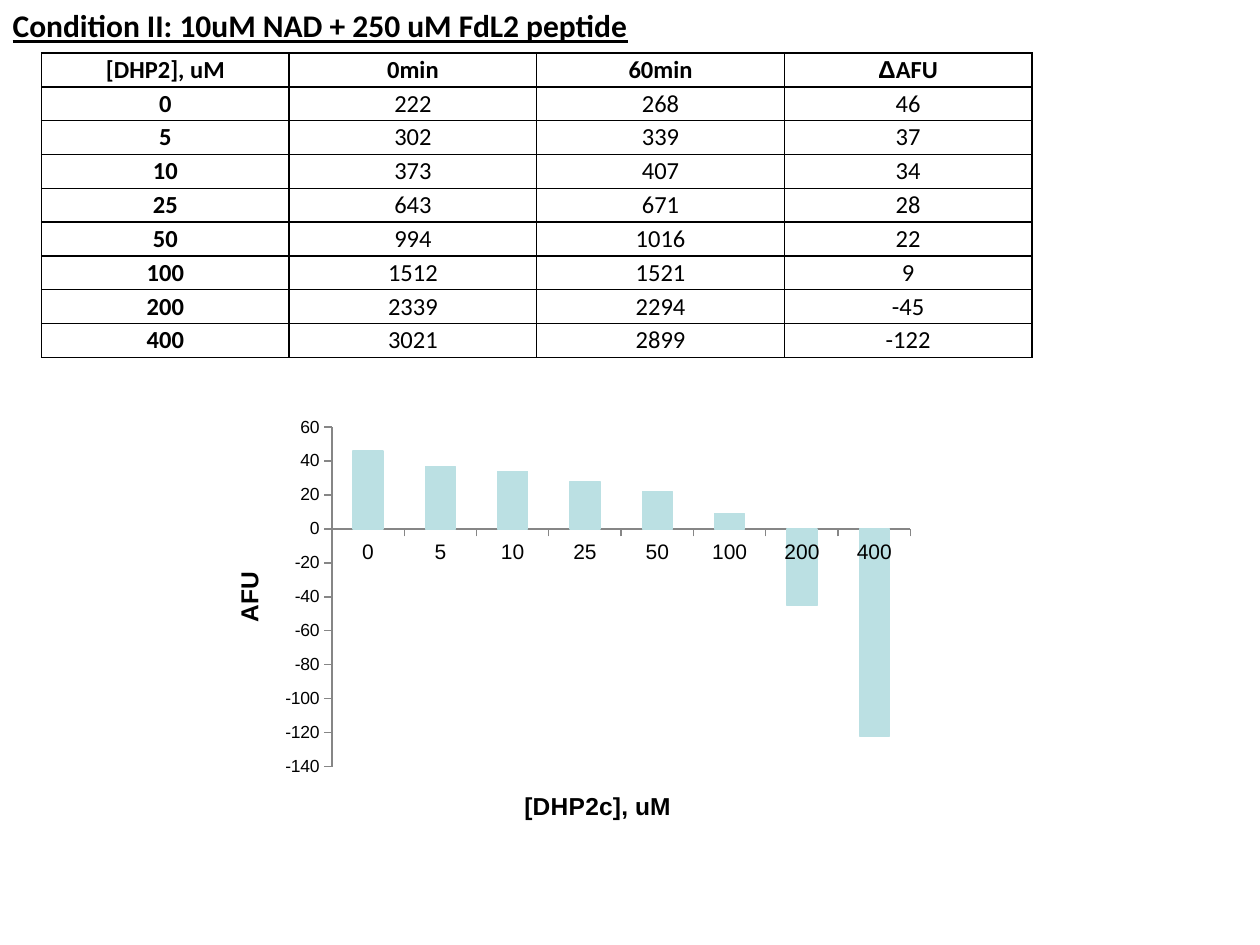
import pptx
import pptx.chart.data
import pptx.dml.color
import pptx.enum.chart
import pptx.enum.text
import pptx.oxml
import pptx.oxml.ns
import pptx.util
from pptx.util import Inches

HEADING = "Condition II: 10uM NAD + 250 uM FdL2 peptide"
HEADERS = ["[DHP2], uM", "0min", "60min", "ΔAFU"]
READINGS = [  # concentration, AFU at 0 min, AFU at 60 min, change
    (0, 222, 268, 46),
    (5, 302, 339, 37),
    (10, 373, 407, 34),
    (25, 643, 671, 28),
    (50, 994, 1016, 22),
    (100, 1512, 1521, 9),
    (200, 2339, 2294, -45),
    (400, 3021, 2899, -122),
]
COLORS = {"text": "000000", "border": "000000", "bar": "BBE0E3", "axis": "868686"}
TABLE_BOX = [Inches(v) for v in (0.33, 0.42, 7.86, 2.42)]
CHART_BOX = [Inches(v) for v in (1.67, 3.25, 5.67, 3.5)]
PLOT_AREA = {"x": 0.17, "y": 0.04, "w": 0.81, "h": 0.77}
CENTER = pptx.enum.text.PP_ALIGN.CENTER


def rgb(name):
    return pptx.dml.color.RGBColor.from_string(COLORS[name])


def set_all(target, **values):
    for name, value in values.items():
        setattr(target, name, value)


def style_font(font, size, face, **extra):
    set_all(font, size=pptx.util.Pt(size), name=face, **extra)
    font.color.rgb = rgb("text")


def add_heading(slide):
    heading = slide.shapes.title
    set_all(heading, left=0, top=0, width=Inches(5.13), height=Inches(0.4))
    frame = heading.text_frame
    set_all(frame, text=HEADING, word_wrap=False,
            vertical_anchor=pptx.enum.text.MSO_ANCHOR.TOP,
            auto_size=pptx.enum.text.MSO_AUTO_SIZE.SHAPE_TO_FIT_TEXT,
            margin_left=Inches(0.1), margin_right=Inches(0.1),
            margin_top=Inches(0.05), margin_bottom=Inches(0.05))
    line = frame.paragraphs[0]
    line.alignment = pptx.enum.text.PP_ALIGN.LEFT
    style_font(line.runs[0].font, 18, "Calibri", bold=True, underline=True)


def draw_borders(cell):
    properties = cell._tc.get_or_add_tcPr()
    for side in ("lnL", "lnR", "lnT", "lnB"):
        properties.append(pptx.oxml.parse_xml(
            f'<a:{side} {pptx.oxml.ns.nsdecls("a")} w="12700"><a:solidFill>'
            f'<a:srgbClr val="{COLORS["border"]}"/></a:solidFill></a:{side}>'))


def fill_cell(cell, text, bold):
    set_all(cell, margin_left=0, margin_right=0, margin_top=0, margin_bottom=0,
            vertical_anchor=pptx.enum.text.MSO_ANCHOR.MIDDLE)
    paragraph = cell.text_frame.paragraphs[0]
    paragraph.alignment = CENTER
    # The Greek delta is set in Arial, everything else in Calibri
    parts = ["Δ", text[1:]] if text.startswith("Δ") else [text]
    for part in parts:
        run = paragraph.add_run()
        run.text = part
        style_font(run.font, 14, "Arial" if part == "Δ" else "Calibri", bold=bold)
    draw_borders(cell)
    cell.fill.background()


def add_readings_table(slide):
    rows = [HEADERS] + READINGS
    table = slide.shapes.add_table(len(rows), len(HEADERS), *TABLE_BOX).table
    set_all(table, first_row=False, horz_banding=False)
    for r, row in enumerate(rows):
        for c, value in enumerate(row):
            fill_cell(table.cell(r, c), str(value), bold=r == 0 or c == 0)


def style_axis(axis, title, size):
    set_all(axis, has_major_gridlines=False, has_title=True,
            major_tick_mark=pptx.enum.chart.XL_TICK_MARK.OUTSIDE,
            minor_tick_mark=pptx.enum.chart.XL_TICK_MARK.NONE)
    axis.format.line.color.rgb = rgb("axis")
    axis.format.line.width = pptx.util.Pt(0.75)
    style_font(axis.tick_labels.font, size, "Arial")
    frame = axis.axis_title.text_frame
    frame.text = title
    style_font(frame.paragraphs[0].runs[0].font, 14, "Arial", bold=True)


def place_plot_area(chart):
    plot_area = chart._chartSpace.chart.plotArea
    for old in plot_area.findall(pptx.oxml.ns.qn("c:layout")):
        plot_area.remove(old)
    modes = "".join(f'<c:{side}Mode val="edge"/>' for side in "xy")
    sizes = "".join(f'<c:{key} val="{value}"/>' for key, value in PLOT_AREA.items())
    plot_area.insert(0, pptx.oxml.parse_xml(
        f'<c:layout {pptx.oxml.ns.nsdecls("c")}><c:manualLayout>'
        f'<c:layoutTarget val="inner"/>{modes}{sizes}</c:manualLayout></c:layout>'))


def add_change_chart(slide):
    data = pptx.chart.data.CategoryChartData()
    data.categories = [str(row[0]) for row in READINGS]
    data.add_series("Series 1", [row[-1] for row in READINGS])
    chart = slide.shapes.add_chart(
        pptx.enum.chart.XL_CHART_TYPE.COLUMN_CLUSTERED, *CHART_BOX, data).chart
    set_all(chart, has_title=False, has_legend=False)
    style_font(chart.font, 10, "Arial")
    style_axis(chart.category_axis, "[DHP2c], uM", 12)
    style_axis(chart.value_axis, "AFU", 10)
    set_all(chart.value_axis, minimum_scale=-140, maximum_scale=60, major_unit=20)
    plot = chart.plots[0]
    set_all(plot, gap_width=140, vary_by_categories=False)
    bars = plot.series[0]
    bars.invert_if_negative = False
    bars.format.fill.solid()
    bars.format.fill.fore_color.rgb = rgb("bar")
    bars.format.line.color.rgb = rgb("bar")
    bars.format.line.width = pptx.util.Pt(0.75)
    place_plot_area(chart)


def main():
    deck = pptx.Presentation()
    set_all(deck, slide_width=Inches(10), slide_height=Inches(7.5))
    slide = deck.slides.add_slide(deck.slide_layouts.get_by_name("Title Only"))
    add_readings_table(slide)
    add_heading(slide)
    add_change_chart(slide)
    deck.save("out.pptx")


if __name__ == "__main__":
    main()
